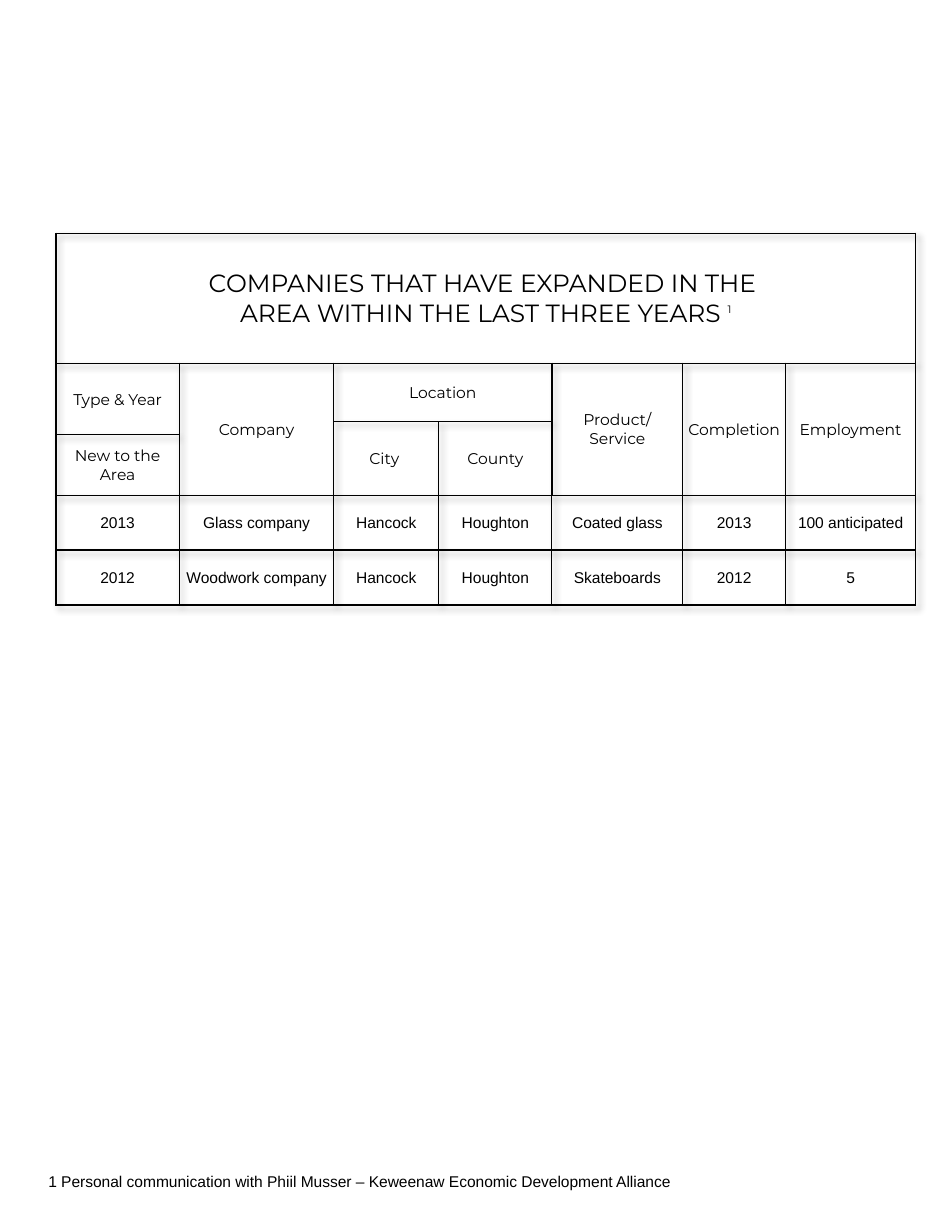
from itertools import product

from lxml import etree
from pptx import Presentation
from pptx.dml.color import RGBColor
from pptx.enum.text import MSO_ANCHOR, PP_ALIGN
from pptx.oxml import parse_xml
from pptx.oxml.ns import nsdecls, qn
from pptx.util import Pt

BLACK = RGBColor(0, 0, 0)
HEAD, BODY = "Montserrat", "Arial"
PLAIN = "{2D5ABB26-0587-4C30-8999-92F81FD0307C}"  # table style without lines or fills

COLS = [79.2, 99.4, 67.5, 72.7, 84.2, 66, 83.7]
ROWS = [83.5, 37.4, 8.6, 38.9, 35.3, 35.3]

# Row, column, row span, column span, lines, thin sides
HEADS = [
    (1, 0, 2, 1, ["Type & Year"], "B"),
    (1, 1, 3, 1, ["Company"], ""),
    (1, 2, 1, 2, ["Location"], "B"),
    (1, 4, 3, 1, ["Product/", "Service"], ""),
    (1, 5, 3, 1, ["Completion"], ""),
    (1, 6, 3, 1, ["Employment"], ""),
    (2, 2, 2, 1, ["City "], "TR"),
    (2, 3, 2, 1, ["County"], "TL"),
    (3, 0, 1, 1, ["New to the Area"], "T"),
]
DATA = [
    ["2013", "Glass company", "Hancock", "Houghton",
     "Coated glass", "2013", "100 anticipated"],
    ["2012", "Woodwork company", "Hancock", "Houghton",
     "Skateboards", "2012", "5"],
]


def style(para, name, size):
    para.font.name = name
    para.font.size = Pt(size)
    para.font.color.rgb = BLACK


def edge(cell, thin):
    """Draw the four sides of a cell, those in thin at half a point."""
    props = cell._tc.get_or_add_tcPr()
    for spot, side in enumerate("LRTB"):
        width = Pt(0.5 if side in thin else 1)
        props.insert(spot, parse_xml(
            f'<a:ln{side} {nsdecls("a")} w="{width}"><a:solidFill>'
            f'<a:srgbClr val="{BLACK}"/></a:solidFill></a:ln{side}>'))


def block(table, row, col, high, wide, lines, thin, name=HEAD, size=10):
    """Fill a cell, or a merged group of cells, and return its text frame."""
    first = table.cell(row, col)
    if high * wide > 1:
        first.merge(table.cell(row + high - 1, col + wide - 1))
    for r, c in product(range(row, row + high), range(col, col + wide)):
        cell = table.cell(r, c)
        cell.fill.background()
        cell.vertical_anchor = MSO_ANCHOR.MIDDLE
        cell.margin_left = cell.margin_right = cell.margin_top = Pt(0.7)
        cell.margin_bottom = 0
        edge(cell, thin)
    frame = first.text_frame
    frame.text = "\n".join(lines)
    for para in frame.paragraphs:
        para.alignment = PP_ALIGN.CENTER
        style(para, name, size)
    return frame


def shade(table):
    """Give the whole table a plain style and a soft shadow."""
    props = table._tbl.tblPr
    props.find(qn("a:tableStyleId")).text = PLAIN
    props.insert(0, parse_xml(
        f'<a:effectLst {nsdecls("a")}>'
        '<a:outerShdw blurRad="50800" dist="38100" dir="2700000" algn="tl">'
        f'<a:srgbClr val="{BLACK}"><a:alpha val="40000"/></a:srgbClr>'
        '</a:outerShdw></a:effectLst>'))


def add_grid(slide, left, top, width, height):
    table = slide.shapes.add_table(
        len(ROWS), len(COLS), left, top, width, height).table
    table.first_row = table.horz_banding = False
    shade(table)
    for col, size in zip(table.columns, COLS):
        col.width = Pt(size)
    for row, size in zip(table.rows, ROWS):
        row.height = Pt(size)

    # Title band with its note mark
    title = block(table, 0, 0, 1, len(COLS),
                  ["COMPANIES THAT HAVE EXPANDED IN THE ",
                   "AREA WITHIN THE LAST THREE YEARS "], "", size=16)
    mark = title.paragraphs[-1].add_run()
    mark.text = "1"
    mark.font.size = Pt(12)
    mark.font._element.set("baseline", "50000")

    # Column heads
    for head in HEADS:
        block(table, *head)

    # Data rows: thin lines between columns
    last = len(COLS) - 1
    for row, items in enumerate(DATA, 4):
        for col, text in enumerate(items):
            thin = ("L" if col else "") + ("R" if col < last else "")
            block(table, row, col, 1, 1, [text], thin, BODY)


def add_note(slide, left, top, width, height):
    frame = slide.shapes.add_textbox(left, top, width, height).text_frame
    frame.word_wrap = True
    frame.text = ("1 Personal communication with Phiil Musser – "
                  "Keweenaw Economic Development Alliance")
    style(frame.paragraphs[0], BODY, 10)


def main():
    deck = Presentation()
    deck.slide_width, deck.slide_height = Pt(612), Pt(792)
    slide = deck.slides.add_slide(deck.slide_layouts[6])
    add_grid(slide, Pt(36), Pt(150), Pt(sum(COLS)), Pt(sum(ROWS)))
    add_note(slide, Pt(24), Pt(750), Pt(534), Pt(19.4))
    deck.save("out.pptx")


if __name__ == "__main__":
    main()
